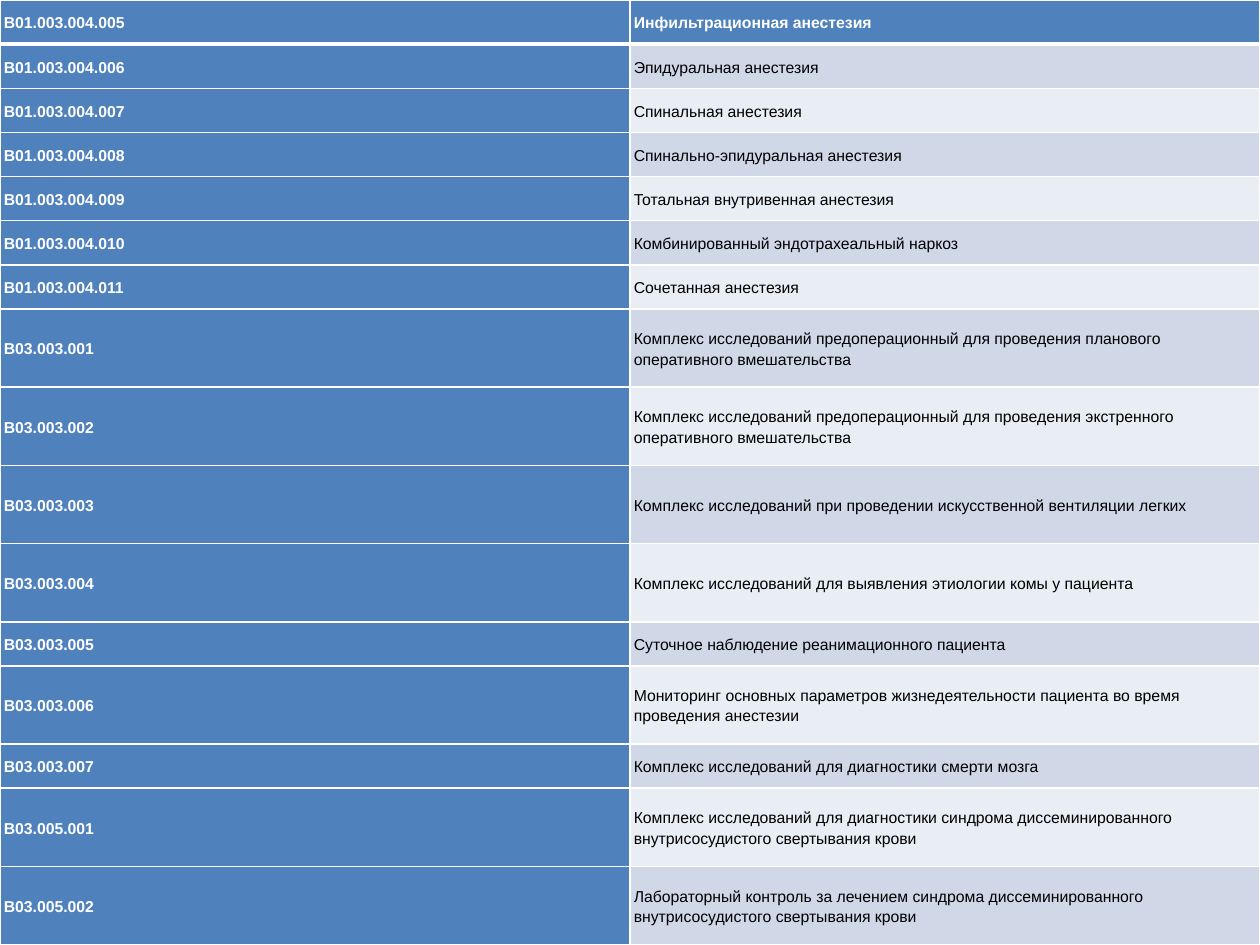
from dataclasses import dataclass

from lxml.etree import SubElement
from pptx import Presentation
from pptx.dml.color import RGBColor
from pptx.enum.text import MSO_ANCHOR
from pptx.oxml.ns import qn
from pptx.util import Inches, Pt

COLORS = {
    "accent": "4F81BD",
    "band_dark": "D0D8E8",
    "band_light": "E9EDF4",
    "white": "FFFFFF",
    "black": "000000",
}
SHORT, TALL = 0.35, 0.62  # relative row heights
MARGIN = Inches(0.03)
THIN, THICK = 1, 3  # border widths in points


@dataclass
class Service:
    code: str
    name: str
    height: float = SHORT


SERVICES = [
    Service("B01.003.004.005", "Инфильтрационная анестезия"),
    Service("B01.003.004.006", "Эпидуральная анестезия"),
    Service("B01.003.004.007", "Спинальная анестезия"),
    Service("B01.003.004.008", "Спинально-эпидуральная анестезия"),
    Service("B01.003.004.009", "Тотальная внутривенная анестезия"),
    Service("B01.003.004.010", "Комбинированный эндотрахеальный наркоз"),
    Service("B01.003.004.011", "Сочетанная анестезия"),
    Service("B03.003.001", "Комплекс исследований предоперационный для проведения "
            "планового оперативного вмешательства", TALL),
    Service("B03.003.002", "Комплекс исследований предоперационный для проведения "
            "экстренного оперативного вмешательства", TALL),
    Service("B03.003.003", "Комплекс исследований при проведении искусственной "
            "вентиляции легких", TALL),
    Service("B03.003.004", "Комплекс исследований для выявления этиологии комы "
            "у пациента", TALL),
    Service("B03.003.005", "Суточное наблюдение реанимационного пациента"),
    Service("B03.003.006", "Мониторинг основных параметров жизнедеятельности "
            "пациента во время проведения анестезии", TALL),
    Service("B03.003.007", "Комплекс исследований для диагностики смерти мозга"),
    Service("B03.005.001", "Комплекс исследований для диагностики синдрома "
            "диссеминированного внутрисосудистого свертывания крови", TALL),
    Service("B03.005.002", "Лабораторный контроль за лечением синдрома "
            "диссеминированного внутрисосудистого свертывания крови", TALL),
]


def set_borders(cell, top: int, bottom: int) -> None:
    """Draw white lines round a cell; they must precede its fill."""
    tc_pr = cell._tc.get_or_add_tcPr()
    widths = {"a:lnL": THIN, "a:lnR": THIN, "a:lnT": top, "a:lnB": bottom}
    for i, (tag, width) in enumerate(widths.items()):
        ln = SubElement(tc_pr, qn(tag), w=str(Pt(width)))
        fill = SubElement(ln, qn("a:solidFill"))
        SubElement(fill, qn("a:srgbClr"), val=COLORS["white"])
        tc_pr.insert(i, ln)


def fill_cell(cell, text: str, fill: str, color: str, bold: bool) -> None:
    cell.fill.solid()
    cell.fill.fore_color.rgb = RGBColor.from_string(COLORS[fill])
    cell.vertical_anchor = MSO_ANCHOR.MIDDLE
    cell.margin_left = cell.margin_right = MARGIN
    cell.margin_top = cell.margin_bottom = MARGIN
    cell.text = text
    p = cell.text_frame.paragraphs[0]
    p.line_spacing = 1.15
    p.space_after = Pt(10)
    p.font.name = "Arial"
    p.font.size = Pt(9)
    p.font.bold = bold
    p.font.color.rgb = RGBColor.from_string(COLORS[color])


def add_services(s, services: list[Service], width: int, height: int) -> None:
    table = s.shapes.add_table(len(services), 2, 0, 0, width, height).table
    total = sum(service.height for service in services)
    for row, service in enumerate(services):
        table.rows[row].height = int(height * service.height / total)
        band = "band_dark" if row % 2 else "band_light"
        for col, text in enumerate((service.code, service.name)):
            cell = table.cell(row, col)
            # The first row and the code column are emphasised
            if row == 0 or col == 0:
                fill_cell(cell, text, "accent", "white", True)
            else:
                fill_cell(cell, text, band, "black", False)
            set_borders(cell, top=THICK if row == 1 else THIN,
                        bottom=THICK if row == 0 else THIN)


def main() -> None:
    prs = Presentation()
    prs.slide_width, prs.slide_height = Inches(10), Inches(7.5)
    s = prs.slides.add_slide(prs.slide_layouts[6])
    # The table covers the whole slide
    add_services(s, SERVICES, prs.slide_width, prs.slide_height)
    prs.save("out.pptx")


if __name__ == "__main__":
    main()
